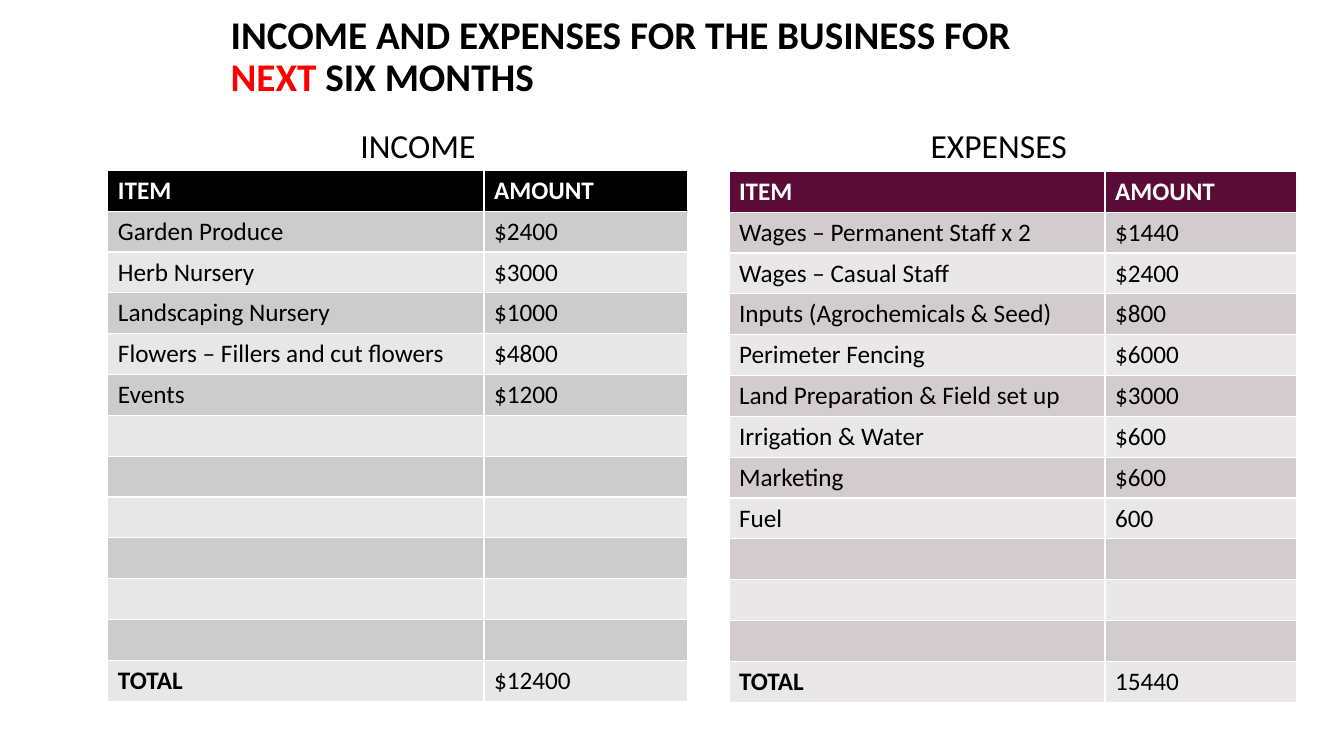
from pptx import Presentation
from pptx.dml.color import RGBColor
from pptx.enum.text import MSO_ANCHOR, PP_ALIGN
from pptx.util import Inches, Pt

BLACK = RGBColor(0x00, 0x00, 0x00)
WHITE = RGBColor(0xFF, 0xFF, 0xFF)
RED = RGBColor(0xFF, 0x00, 0x00)
PLUM = RGBColor(0x5A, 0x0B, 0x36)
GREY_BANDS = (RGBColor(0xCC, 0xCC, 0xCC), RGBColor(0xE7, 0xE7, 0xE7))
PLUM_BANDS = (RGBColor(0xD2, 0xCC, 0xCE), RGBColor(0xEA, 0xE7, 0xE8))

TITLE = [
    ("INCOME AND EXPENSES FOR THE BUSINESS FOR \v", BLACK),
    ("NEXT ", RED),
    ("SIX MONTHS", BLACK),
]
HEADER = ("ITEM", "AMOUNT")
INCOME = [
    ("Garden Produce", "$2400"),
    ("Herb Nursery", "$3000"),
    ("Landscaping Nursery", "$1000"),
    ("Flowers – Fillers and cut flowers", "$4800"),
    ("Events", "$1200"),
]
EXPENSES = [
    ("Wages – Permanent Staff x 2", "$1440"),
    ("Wages – Casual Staff", "$2400"),
    ("Inputs (Agrochemicals & Seed)", "$800"),
    ("Perimeter Fencing", "$6000"),
    ("Land Preparation & Field set up", "$3000"),
    ("Irrigation & Water", "$600"),
    ("Marketing", "$600"),
    ("Fuel", "600"),
]
# heading, heading left, table left, table top, column widths, items, total, header fill, bands
LEDGERS = [
    ("INCOME", 1.47, 1.07, 1.69, (3.73, 2.02), INCOME, "$12400", BLACK, GREY_BANDS),
    ("EXPENSES", 7.23, 7.23, 1.7, (3.73, 1.9), EXPENSES, "15440", PLUM, PLUM_BANDS),
]
ROW_COUNT = 13
TABLE_HEIGHT = 5.27


def write(para, pieces, size=18, bold=False, align=PP_ALIGN.LEFT, line_spacing=None):
    """Fill a paragraph with (text, colour) pieces; a vertical tab ends a line."""
    para.alignment = align
    para.line_spacing = line_spacing
    para.font.size = Pt(size)
    for text, color in pieces:
        span = para.add_run()
        span.text = text.rstrip("\v")
        span.font.name = "Calibri"
        span.font.size = Pt(size)
        span.font.bold = bold
        span.font.color.rgb = color
        if text.endswith("\v"):
            para.add_line_break()


def add_text(page, area, pieces, anchor, **style):
    box = page.shapes.add_textbox(*(Inches(length) for length in area))
    box.text_frame.word_wrap = True
    box.text_frame.vertical_anchor = anchor
    write(box.text_frame.paragraphs[0], pieces, line_spacing=0.9, **style)


def add_ledger(page, left, top, widths, items, total, header_fill, bands):
    """Add a table with a header, the items, spare rows and a total."""
    spare = [("", "")] * (ROW_COUNT - len(items) - 2)
    rows = [HEADER, *items, *spare, ("TOTAL", total)]
    table = page.shapes.add_table(
        ROW_COUNT, len(widths), Inches(left), Inches(top),
        Inches(sum(widths)), Inches(TABLE_HEIGHT)).table
    for column, width in zip(table.columns, widths):
        column.width = Inches(width)
    for r, values in enumerate(rows):
        is_header = r == 0
        for c, value in enumerate(values):
            cell = table.cell(r, c)
            cell.fill.solid()
            cell.fill.fore_color.rgb = header_fill if is_header else bands[(r - 1) % 2]
            pieces = [(value, WHITE if is_header else BLACK)] if value else []
            write(cell.text_frame.paragraphs[0], pieces,
                  bold=is_header or value == "TOTAL")


def main():
    deck = Presentation()
    deck.slide_width = Inches(13.33)
    deck.slide_height = Inches(7.5)
    page = deck.slides.add_slide(deck.slide_layouts[6])

    add_text(page, (2.19, 0.27, 10.96, 0.61), TITLE, MSO_ANCHOR.MIDDLE, size=28, bold=True)
    for heading, heading_left, *ledger in LEDGERS:
        add_text(page, (heading_left, 1.06, 5.35, 0.63), [(heading, BLACK)],
                 MSO_ANCHOR.BOTTOM, size=24, align=PP_ALIGN.CENTER)
        add_ledger(page, *ledger)
    deck.save("out.pptx")


if __name__ == "__main__":
    main()
